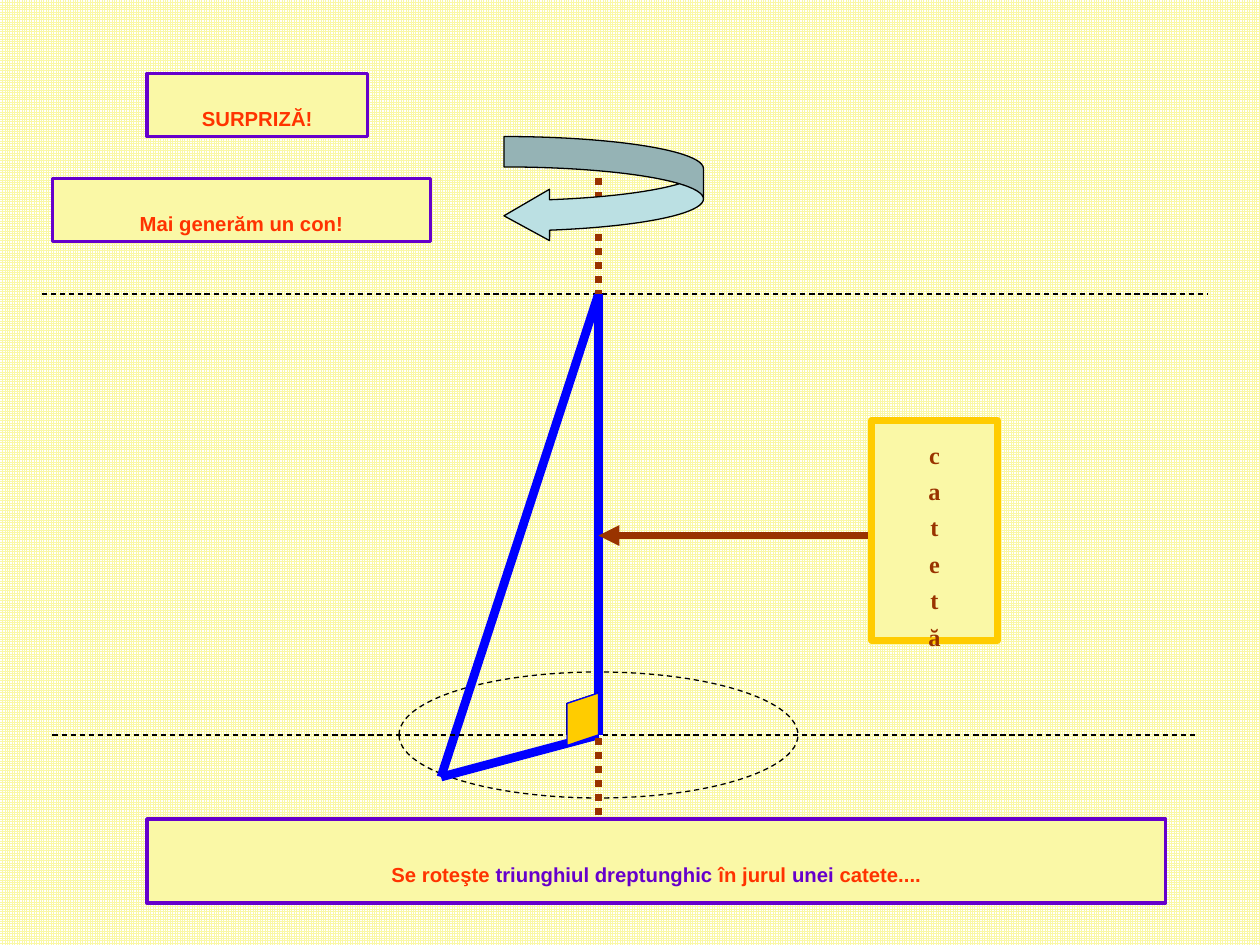
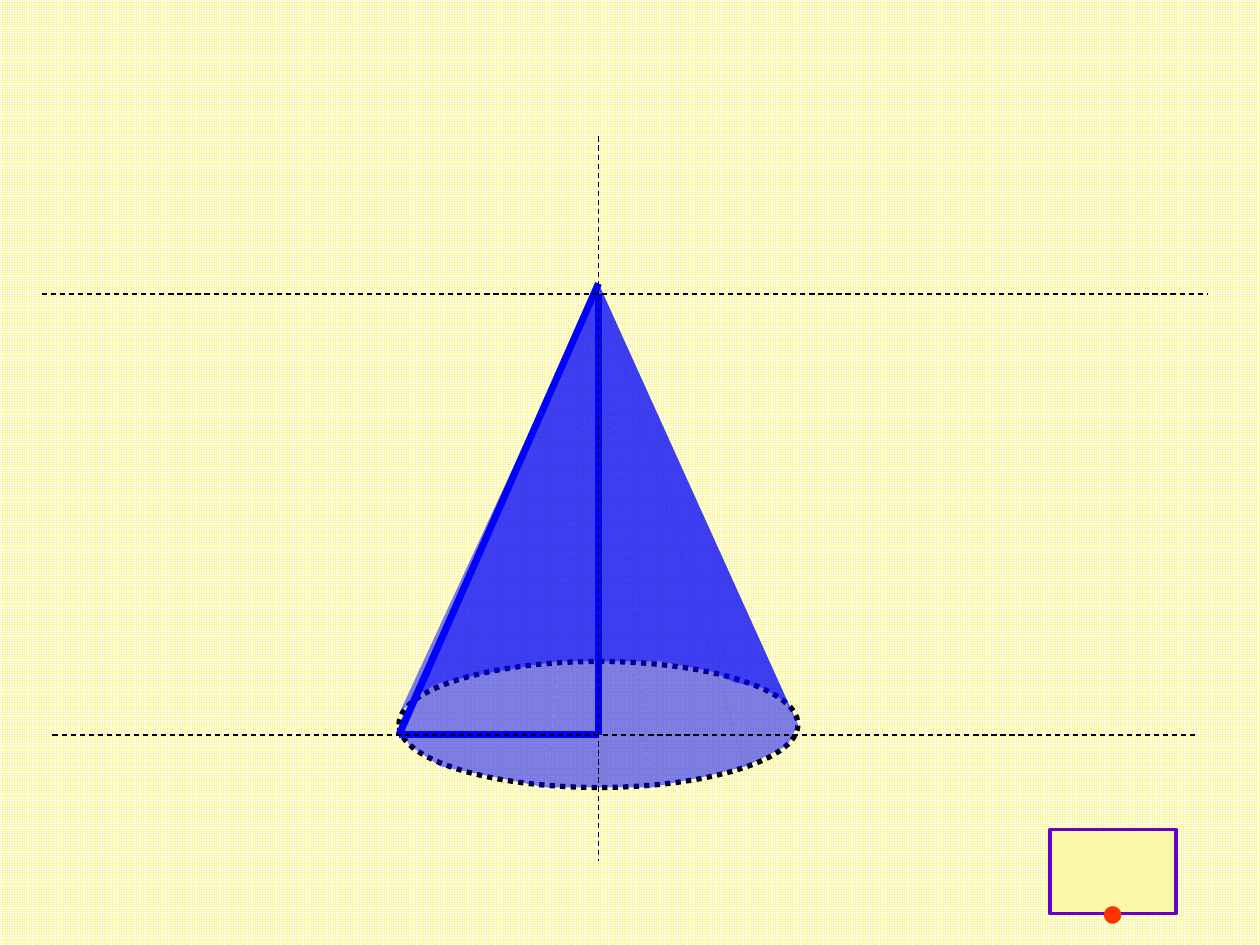
from dataclasses import dataclass
from functools import singledispatch
from typing import Optional

import pptx
import pptx.dml.color
import pptx.enum.dml
import pptx.enum.shapes
import pptx.enum.text
import pptx.oxml.ns
import pptx.util
from lxml import etree

# Shared colours and styles
COLOURS = {
    "paper": "FAF8A6",
    "white": "FFFFFF",
    "black": "000000",
    "blue": "0000FF",
    "brown": "993300",
    "gold": "FFCC00",
    "sky": "BBE0E3",
    "purple": "6600CC",
    "red": "FF3300",
}
DASH = pptx.enum.dml.MSO_LINE.DASH
DOT = pptx.enum.dml.MSO_LINE.ROUND_DOT
SHAPES = pptx.enum.shapes.MSO_SHAPE
SUBSCRIPT = "-33000"
APEX = (57, 27)

Point = tuple[float, float]
Area = tuple[float, float, float, float]


# Parts of the drawings; positions are in twelfths of an inch
@dataclass
class Segment:
    start: Point
    end: Point
    colour: str = "black"
    width: float = 0.75
    dash: Optional[pptx.enum.dml.MSO_LINE] = None
    arrow: bool = False


@dataclass
class Polygon:
    points: list[Point]
    fill: str = "blue"
    line: Optional[str] = None
    opacity: int = 100


@dataclass
class Figure:
    kind: pptx.enum.shapes.MSO_SHAPE
    area: Area
    fill: Optional[str] = None
    line: str = "black"
    width: float = 0.75
    dash: Optional[pptx.enum.dml.MSO_LINE] = None
    adjustments: tuple[float, ...] = ()


@dataclass
class Caption:
    area: Area
    lines: list[list[tuple[str, str]]]  # each line holds (text, colour) runs
    size: int = 20
    font: str = "Arial"
    border: str = "purple"
    width: float = 2
    spacing: float = 1


def grid(steps: float) -> pptx.util.Length:
    return pptx.util.Cm(steps * 2.54 / 12)


def rgb(name: str) -> pptx.dml.color.RGBColor:
    return pptx.dml.color.RGBColor.from_string(COLOURS[name])


def style_line(line, colour: Optional[str], width: float = 0.75, dash=None) -> None:
    if colour is None:
        line.fill.background()
        return
    line.color.rgb = rgb(colour)
    line.width = pptx.util.Pt(width)
    if dash is not None:
        line.dash_style = dash


def style_fill(shape, colour: Optional[str]) -> None:
    shape.shadow.inherit = False
    if colour is None:
        shape.fill.background()
    else:
        shape.fill.solid()
        shape.fill.fore_color.rgb = rgb(colour)


@singledispatch
def draw(part, slide) -> None:
    raise TypeError(f"Cannot draw {part}")


@draw.register
def draw_segment(part: Segment, slide) -> None:
    ends = [grid(value) for value in (*part.start, *part.end)]
    connector = slide.shapes.add_connector(
        pptx.enum.shapes.MSO_CONNECTOR.STRAIGHT, *ends)
    style_line(connector.line, part.colour, part.width, part.dash)
    properties = connector._element.spPr
    qn = pptx.oxml.ns.qn
    if part.arrow:
        etree.SubElement(properties.find(qn("a:ln")), qn("a:headEnd"), type="triangle")
    etree.SubElement(properties, qn("a:effectLst"))


@draw.register
def draw_polygon(part: Polygon, slide) -> None:
    first, *others = [(grid(x), grid(y)) for x, y in part.points]
    builder = slide.shapes.build_freeform(*first, scale=1.0)
    builder.add_line_segments(others, close=True)
    shape = builder.convert_to_shape()
    style_fill(shape, part.fill)
    style_line(shape.line, part.line)
    if part.opacity < 100:
        qn = pptx.oxml.ns.qn
        colour = shape._element.spPr.find(f"{qn('a:solidFill')}/{qn('a:srgbClr')}")
        etree.SubElement(colour, qn("a:alpha"), val=str(part.opacity * 1000))


def add_figure(part: Figure, slide):
    shape = slide.shapes.add_shape(part.kind, *[grid(value) for value in part.area])
    for index, value in enumerate(part.adjustments):
        shape.adjustments[index] = value
    style_fill(shape, part.fill)
    style_line(shape.line, part.line, part.width, part.dash)
    return shape


@draw.register
def draw_figure(part: Figure, slide) -> None:
    add_figure(part, slide)


@draw.register
def draw_caption(part: Caption, slide) -> None:
    frame = Figure(SHAPES.RECTANGLE, part.area, "paper", part.border, part.width)
    text_frame = add_figure(frame, slide).text_frame
    text_frame.word_wrap = False
    text_frame.vertical_anchor = pptx.enum.text.MSO_ANCHOR.MIDDLE
    for index, spans in enumerate(part.lines):
        paragraph = text_frame.add_paragraph() if index else text_frame.paragraphs[0]
        paragraph.alignment = pptx.enum.text.PP_ALIGN.CENTER
        paragraph.line_spacing = part.spacing
        for text, colour in spans:
            run = paragraph.add_run()
            run.text = text
            run.font.name = part.font
            run.font.size = pptx.util.Pt(part.size)
            run.font.bold = True
            run.font.color.rgb = rgb(colour)
            run._r.get_or_add_rPr().set("baseline", SUBSCRIPT)


def facet(*rim: Point) -> Polygon:
    return Polygon([APEX, *rim], opacity=50)


def blue_edge(start: Point, end: Point, width: float) -> Segment:
    return Segment(start, end, "blue", width)


# Guides shared by both slides
TOP_GUIDE = Segment((4, 28), (115, 28), dash=DASH)
BASE_GUIDE = Segment((5, 70), (114, 70), dash=DASH)

# Slide 1: the right triangle turning about one leg
TRIANGLE = [
    Figure(SHAPES.OVAL, (38, 64, 38, 12), dash=DASH),
    blue_edge((42, 74), (57, 70), 5),
    blue_edge((57, 28), (42, 74), 5),
    TOP_GUIDE,
    Segment((57, 17), (57, 82), "brown", 4, DOT),
    BASE_GUIDE,
    blue_edge((57, 28), (57, 70), 5),
    Segment((57, 66), (54, 67)),
    Segment((54, 67), (54, 70)),
    Polygon([(54, 71), (54, 67), (57, 66), (57, 70)], "gold", "blue"),
    Figure(SHAPES.CURVED_LEFT_ARROW, (48, 13, 19, 10), "sky",
           adjustments=(0.29, 0.49, 0.435)),
    Caption((14, 7, 21, 6), [[("SURPRIZĂ!", "red")]]),
    Caption((5, 17, 36, 6), [[("Mai generăm un con!", "red")]]),
    Segment((57, 51), (84, 51), "brown", 4, arrow=True),
    Caption((83, 40, 12, 21), [[(letter, "brown")] for letter in "catetă"],
            24, "Times New Roman", "gold", 4, 0.6),
    Caption((14, 78, 97, 8), [[
        ("Se roteşte ", "red"), ("triunghiul dreptunghic", "purple"),
        (" în jurul ", "red"), ("unei ", "purple"), ("catete....", "red")]]),
]

# Slide 2: the cone it sweeps out
CONE = [
    Figure(SHAPES.OVAL, (38, 63, 38, 12), width=3, dash=DOT),
    blue_edge(APEX, (38, 70), 4),
    facet((42, 65), (40, 66), (38, 68)),
    facet((38, 69), (39, 71), (42, 73)),
    facet((61, 63), (57, 63), (53, 63)),
    facet((53, 63), (47, 64), (42, 65)),
    facet((70, 65), (68, 64), (63, 63), (61, 63)),
    facet((76, 69), (75, 67), (72.6, 65.5), (70, 65)),
    blue_edge((38, 70), (57, 70), 4),
    facet((76, 69), (75, 71), (73, 72), (71, 73)),
    facet((71, 73), (67, 74), (62, 75)),
    blue_edge((57, 28), (57, 70), 4),
    facet((52, 75), (62, 75)),
    facet((42, 73), (47, 74), (52, 75)),
    TOP_GUIDE,
    Segment((57, 13), (57, 82), dash=DASH),
    BASE_GUIDE,
    Caption((100, 79, 12, 8), [[("•", "red")]], size=60),
]


def main() -> None:
    presentation = pptx.Presentation()
    presentation.slide_width = pptx.util.Cm(25.4)
    presentation.slide_height = pptx.util.Cm(19.05)
    blank = presentation.slide_layouts[6]
    for parts in (TRIANGLE, CONE):
        slide = presentation.slides.add_slide(blank)
        paper = slide.background.fill
        paper.patterned()
        paper.pattern = pptx.enum.dml.MSO_PATTERN.SMALL_GRID
        paper.fore_color.rgb = rgb("paper")
        paper.back_color.rgb = rgb("white")
        for part in parts:
            draw(part, slide)
    presentation.save("out.pptx")


if __name__ == "__main__":
    main()
